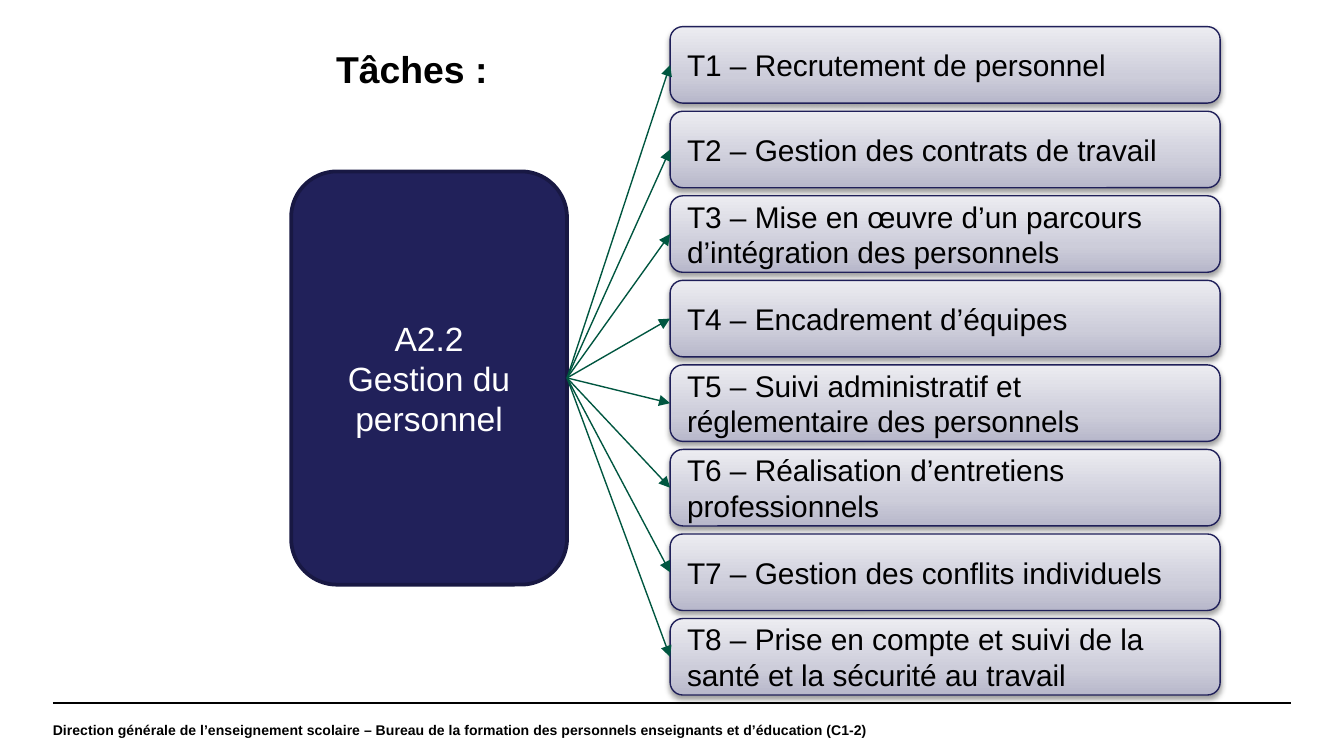
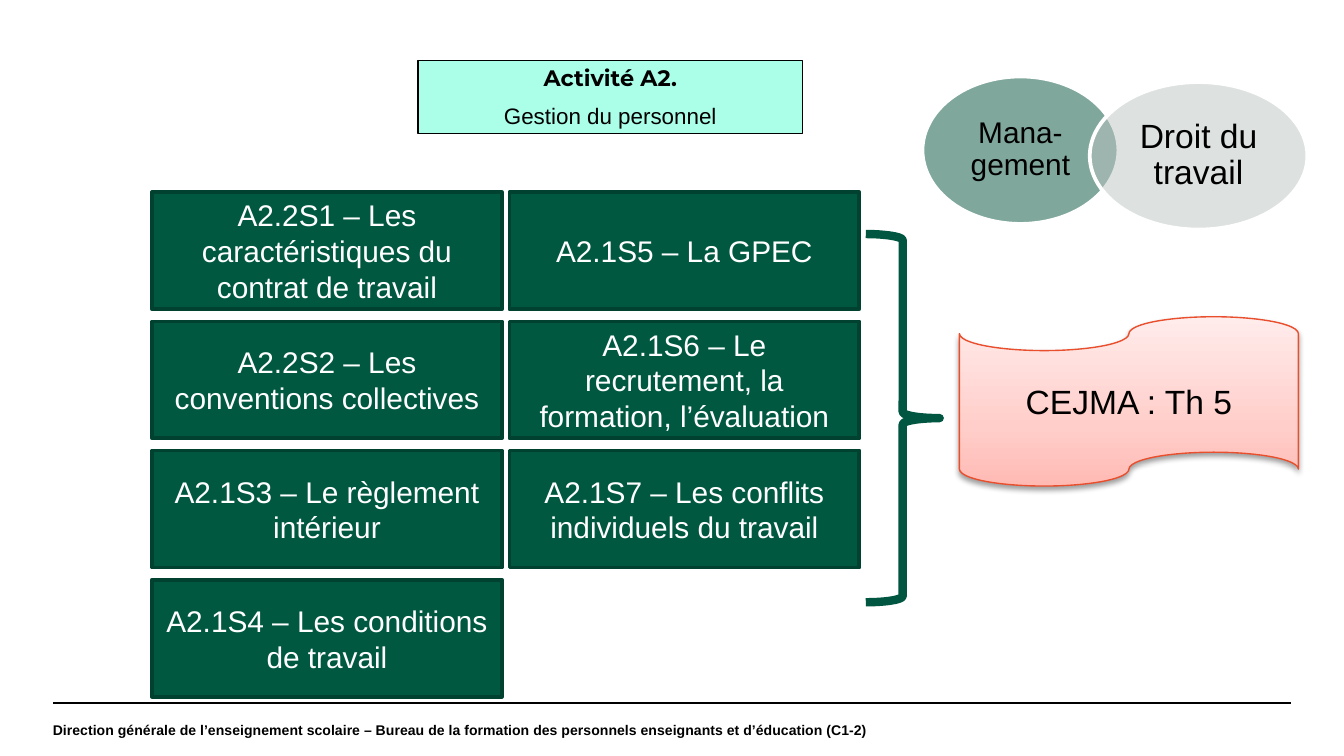
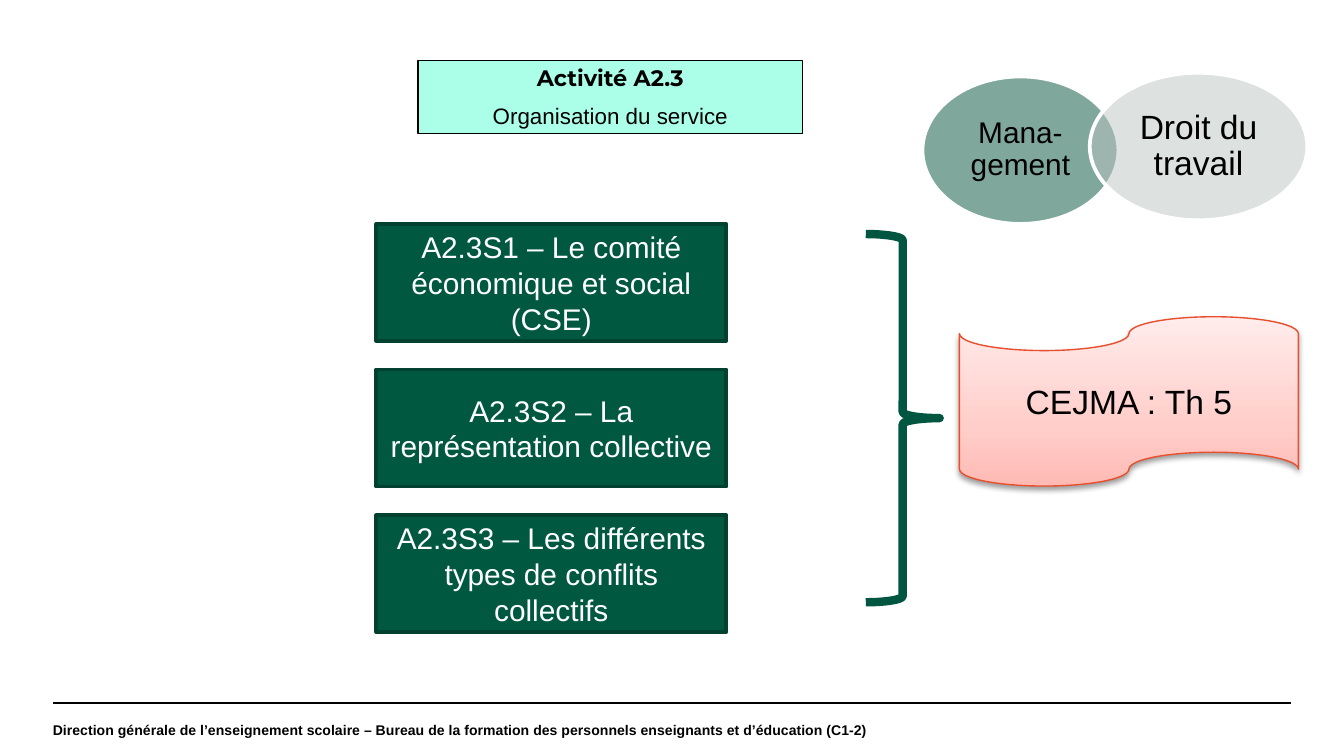
from dataclasses import dataclass
from typing import NamedTuple, Optional

from lxml.etree import SubElement
from pptx import Presentation
from pptx.dml.color import RGBColor
from pptx.enum.shapes import MSO_CONNECTOR, MSO_SHAPE
from pptx.enum.text import MSO_ANCHOR, MSO_AUTO_SIZE, PP_ALIGN
from pptx.oxml.ns import qn
from pptx.util import Pt


class Box(NamedTuple):
    left: float
    top: float
    width: float
    height: float

    def lengths(self) -> list:
        return [Pt(value) for value in self]


class Gradient(NamedTuple):
    bottom: RGBColor
    middle: RGBColor
    top: RGBColor


@dataclass(frozen=True)
class Theme:
    font: str = "Arial"
    heading_font: str = "Montserrat"
    black: RGBColor = RGBColor(0x00, 0x00, 0x00)
    white: RGBColor = RGBColor(0xFF, 0xFF, 0xFF)
    navy: RGBColor = RGBColor(0x21, 0x21, 0x5A)
    navy_edge: RGBColor = RGBColor(0x18, 0x18, 0x43)
    task_edge: RGBColor = RGBColor(0x1F, 0x1F, 0x59)
    green: RGBColor = RGBColor(0x00, 0x58, 0x41)
    green_edge: RGBColor = RGBColor(0x00, 0x41, 0x30)
    green_line: RGBColor = RGBColor(0x00, 0x56, 0x40)
    mint: RGBColor = RGBColor(0xAB, 0xFF, 0xE9)
    management: RGBColor = RGBColor(0x00, 0x50, 0x3B)
    law: RGBColor = RGBColor(0xBC, 0xC4, 0xC0)
    orange: RGBColor = RGBColor(0xE9, 0x4F, 0x2D)
    lavender: Gradient = Gradient(
        RGBColor(0xB7, 0xB7, 0xCA), RGBColor(0xCD, 0xCD, 0xDA), RGBColor(0xEC, 0xEC, 0xF1)
    )
    rose: Gradient = Gradient(
        RGBColor(0xFF, 0xBA, 0xB4), RGBColor(0xFF, 0xCE, 0xCA), RGBColor(0xFF, 0xEC, 0xEB)
    )
    footer_size: float = 7.5
    heading_size: float = 12
    body_size: float = 16
    large_size: float = 18
    title_size: float = 20


@dataclass(frozen=True)
class Style:
    fill: RGBColor | Gradient | None
    edge: RGBColor
    edge_width: float = 0.75
    opacity: int = 100
    raised: bool = False


@dataclass(frozen=True)
class SkillSlide:
    activity: str
    subject: str
    skills: tuple[str, ...]
    grid: Box
    column_pitch: float
    row_pitch: float
    rows: int
    law_top: float


THEME = Theme()
TASK = Style(THEME.lavender, THEME.task_edge, raised=True)
SKILL = Style(THEME.green, THEME.green_edge, 2)
ACTIVITY = Style(THEME.navy, THEME.navy_edge, 2)
HEADING = Style(THEME.mint, THEME.black)
COURSE = Style(THEME.rose, THEME.orange, raised=True)
BRACE = Style(None, THEME.green_line, 4.5)
MANAGEMENT = Style(THEME.management, THEME.white, 2, 50)
LAW = Style(THEME.law, THEME.white, 2, 50)

FOOTER = (
    "Direction générale de l’enseignement scolaire – Bureau de la formation "
    "des personnels enseignants et d’éducation (C1-2)"
)
TASKS = (
    "T1 – Recrutement de personnel",
    "T2 – Gestion des contrats de travail",
    "T3 – Mise en œuvre d’un parcours d’intégration des personnels",
    "T4 – Encadrement d’équipes",
    "T5 – Suivi administratif et réglementaire des personnels",
    "T6 – Réalisation d’entretiens professionnels",
    "T7 – Gestion des conflits individuels",
    "T8 – Prise en compte et suivi de la santé et la sécurité au travail",
)
SKILL_SLIDES = (
    SkillSlide(
        "Activité A2.",
        "Gestion du personnel",
        (
            "A2.2S1 – Les caractéristiques du contrat de travail",
            "A2.2S2 – Les conventions collectives",
            "A2.1S3 – Le règlement intérieur",
            "A2.1S4 – Les conditions de travail",
            "A2.1S5 – La GPEC",
            "A2.1S6 – Le recrutement, la formation, l’évaluation",
            "A2.1S7 – Les conflits individuels du travail",
        ),
        Box(81.4, 103, 187.5, 62.7), 191.5, 69.2, 4, 44,
    ),
    SkillSlide(
        "Activité A2.3",
        "Organisation du service",
        (
            "A2.3S1 – Le comité économique et social (CSE)",
            "A2.3S2 – La représentation collective",
            "A2.3S3 – Les différents types de conflits collectifs",
        ),
        Box(201.6, 120, 187.5, 62.7), 0, 78, 3, 39,
    ),
)


def write(
    frame,
    text: str,
    *,
    size: float = THEME.body_size,
    color: RGBColor = THEME.black,
    font: str = THEME.font,
    bold: bool = False,
    align: PP_ALIGN = PP_ALIGN.CENTER,
    space_before: float = 0,
    line_spacing: Optional[float] = None,
) -> None:
    paragraph = frame.add_paragraph() if frame.text else frame.paragraphs[0]
    paragraph.alignment = align
    if space_before:
        paragraph.space_before = Pt(space_before)
    if line_spacing:
        paragraph.line_spacing = line_spacing
    run = paragraph.add_run()
    run.text = text
    run.font.name = font
    run.font.size = Pt(size)
    run.font.bold = bold
    run.font.color.rgb = color


def set_insets(frame, horizontal: float, vertical: float) -> None:
    frame.margin_left = frame.margin_right = Pt(horizontal)
    frame.margin_top = frame.margin_bottom = Pt(vertical)


def paint_gradient(shape, gradient: Gradient) -> None:
    shape.fill.gradient()
    shape.fill.gradient_angle = 90
    stops = shape.element.spPr.find(qn("a:gradFill")).find(qn("a:gsLst"))
    for stop in list(stops):
        stops.remove(stop)
    for position, color in zip((0, 35, 100), gradient):
        stop = SubElement(stops, qn("a:gs"), pos=str(position * 1000))
        SubElement(stop, qn("a:srgbClr"), val=str(color))


def cast_shadow(shape) -> None:
    effects = shape.element.spPr.find(qn("a:effectLst"))
    shadow = SubElement(
        effects, qn("a:outerShdw"),
        blurRad=str(Pt(3.1)), dist=str(Pt(1.6)), dir="5400000", rotWithShape="0",
    )
    color = SubElement(shadow, qn("a:srgbClr"), val=str(THEME.black))
    SubElement(color, qn("a:alpha"), val="38000")


def apply_style(shape, style: Style) -> None:
    if style.fill is None:
        shape.fill.background()
    elif isinstance(style.fill, Gradient):
        paint_gradient(shape, style.fill)
    else:
        shape.fill.solid()
        shape.fill.fore_color.rgb = style.fill
        if style.opacity < 100:
            color = shape.element.spPr.find(qn("a:solidFill"))[0]
            SubElement(color, qn("a:alpha"), val=str(style.opacity * 1000))
    shape.line.color.rgb = style.edge
    shape.line.width = Pt(style.edge_width)


def add_block(slide, kind: MSO_SHAPE, box: Box, style: Style):
    block = slide.shapes.add_shape(kind, *box.lengths())
    block.shadow.inherit = False
    apply_style(block, style)
    if style.raised:
        cast_shadow(block)
    block.text_frame.word_wrap = True
    block.text_frame.vertical_anchor = MSO_ANCHOR.MIDDLE
    return block


def add_line(slide, start: tuple, end: tuple, color: RGBColor, width: float):
    line = slide.shapes.add_connector(
        MSO_CONNECTOR.STRAIGHT, *[Pt(value) for value in start + end]
    )
    line.line.color.rgb = color
    line.line.width = Pt(width)
    SubElement(line.element.spPr, qn("a:effectLst"))
    return line


def add_arrow(slide, source, target) -> None:
    arrow = add_line(slide, (0, 0), (1, 1), THEME.green_line, 0.75)
    arrow.begin_connect(source, 3)
    arrow.end_connect(target, 1)
    outline = arrow.element.spPr.find(qn("a:ln"))
    SubElement(outline, qn("a:tailEnd"), type="triangle")


def add_base_slide(deck):
    slide = deck.slides.add_slide(deck.slide_layouts[5])
    add_line(slide, (28.3, 376.7), (691.7, 376.7), THEME.black, 0.8)
    footer = slide.shapes.add_textbox(*Box(28.3, 376.7, 672, 28.3).lengths()).text_frame
    footer.word_wrap = True
    footer.vertical_anchor = MSO_ANCHOR.MIDDLE
    set_insets(footer, 0, 0)
    write(footer, FOOTER, size=THEME.footer_size, bold=True, align=PP_ALIGN.LEFT)
    return slide


def place_title(slide, box: Box, anchor: MSO_ANCHOR):
    title = slide.shapes.title
    title.left, title.top, title.width, title.height = box.lengths()
    title.text_frame.auto_size = MSO_AUTO_SIZE.NONE
    title.text_frame.vertical_anchor = anchor
    return title


def add_task_slide(deck) -> None:
    slide = add_base_slide(deck)
    title = place_title(slide, Box(172.8, 21, 396.7, 31.5), MSO_ANCHOR.TOP)
    write(title.text_frame, "Tâches :", size=THEME.title_size, bold=True, align=PP_ALIGN.LEFT)

    activity = add_block(
        slide, MSO_SHAPE.ROUNDED_RECTANGLE, Box(156, 91.8, 147.8, 221.4), ACTIVITY
    )
    for line in ("A2.2", "Gestion du personnel"):
        write(activity.text_frame, line, size=THEME.large_size, color=THEME.white)

    for row, label in enumerate(TASKS):
        task = add_block(
            slide, MSO_SHAPE.ROUNDED_RECTANGLE, Box(359, 14.3 + 45.3 * row, 294.7, 41), TASK
        )
        write(task.text_frame, label, align=PP_ALIGN.LEFT)
        add_arrow(slide, activity, task)


def add_discipline(slide, label: str, box: Box, style: Style, size: float) -> None:
    discipline = add_block(slide, MSO_SHAPE.OVAL, box, style).text_frame
    set_insets(discipline, 4.3, 1.8)
    write(discipline, label, size=size, line_spacing=0.9)


def add_skill_slide(deck, content: SkillSlide) -> None:
    slide = add_base_slide(deck)
    heading = place_title(slide, Box(224, 32.4, 206, 39), MSO_ANCHOR.MIDDLE)
    apply_style(heading, HEADING)
    heading.text_frame.word_wrap = False
    write(
        heading.text_frame, content.activity,
        size=THEME.heading_size, font=THEME.heading_font, bold=True,
    )
    write(heading.text_frame, content.subject, size=THEME.heading_size, space_before=6)

    grid = content.grid
    for index, label in enumerate(content.skills):
        column, row = divmod(index, content.rows)
        cell = grid._replace(
            left=grid.left + column * content.column_pitch,
            top=grid.top + row * content.row_pitch,
        )
        skill = add_block(slide, MSO_SHAPE.RECTANGLE, cell, SKILL)
        write(skill.text_frame, label, color=THEME.white)

    add_block(slide, MSO_SHAPE.RIGHT_BRACE, Box(463.8, 125.4, 39.6, 197.3), BRACE)
    course = add_block(
        slide, MSO_SHAPE.FLOWCHART_PUNCHED_TAPE, Box(514, 169.7, 181.6, 90.7), COURSE
    )
    write(course.text_frame, "CEJMA : Th 5", size=THEME.large_size)
    add_discipline(
        slide, "Mana-gement", Box(494.2, 41, 105, 79), MANAGEMENT, THEME.body_size
    )
    add_discipline(
        slide, "Droit du travail", Box(583.8, content.law_top, 116.6, 79), LAW, THEME.large_size
    )


def main() -> None:
    deck = Presentation()
    deck.slide_width, deck.slide_height = Pt(720), Pt(405)
    add_task_slide(deck)
    for content in SKILL_SLIDES:
        add_skill_slide(deck, content)
    deck.save("out.pptx")


if __name__ == "__main__":
    main()
